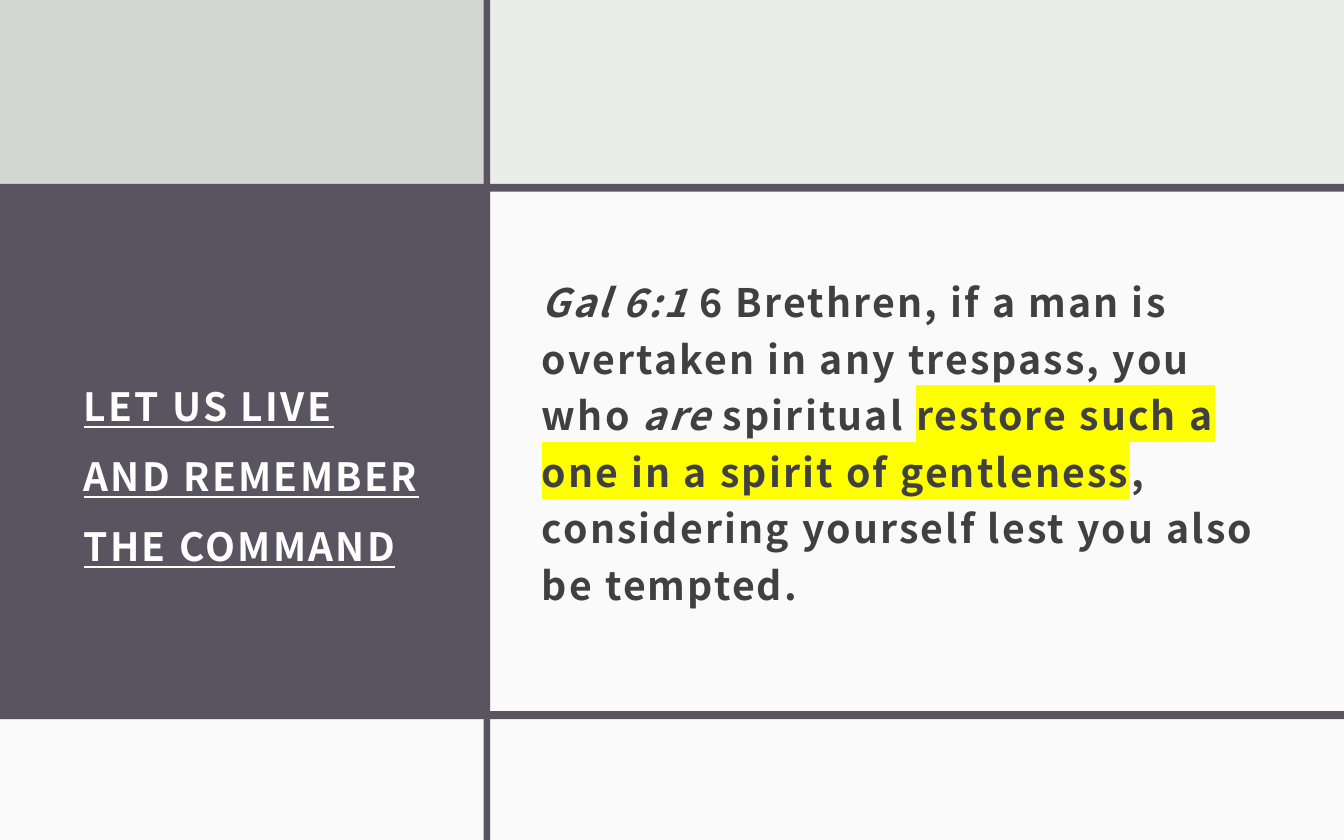
from lxml import etree
from pptx import Presentation
from pptx import util as u
from pptx.dml.color import RGBColor
from pptx.enum import shapes, text
from pptx.oxml.ns import qn

# Content
FONT = "Noto Sans CJK JP"
TITLE = [("LET US LIVE AND REMEMBER THE COMMAND", "")]
VERSE = [
    ("Gal 6:1 ", "italic"),
    ("6\u00a0Brethren, if a man is overtaken in any trespass, you who ", ""),
    ("are", "italic"),
    (" spiritual ", ""),
    ("restore such a one in a spirit of gentleness", "highlight"),
    (", considering yourself lest you also be tempted.", ""),
]

# Layout in centimetres
WIDTH, HEIGHT = 30.48, 19.05
COLUMN = 11.07
ROW_1, ROW_2 = 4.22, 16.28
BAR = 0.18
TEXT_TOP = 5.44
PURPLE, PALE, SAGE, WHITE = "595460", "EBEDEB", "D2D7D2", "FFFFFF"

# Left, top, width, height, colour, opacity in percent; back to front
PANELS = [
    (0, 0, WIDTH, HEIGHT, PALE, 100),
    (0, 4.17, COLUMN, 12.14, PURPLE, 100),
    (0, 0, COLUMN, ROW_1, SAGE, 100),
    (COLUMN, ROW_1, WIDTH - COLUMN, 12.09, WHITE, 75),
    (0, 4.17, WIDTH, BAR, PURPLE, 100),
    (0, ROW_2, WIDTH, HEIGHT - ROW_2, WHITE, 75),
    (0, 16.13, WIDTH, BAR, PURPLE, 100),
    (10.97, 0, 0.15, HEIGHT, PURPLE, 100),
]


def colour(value):
    return RGBColor.from_string(value)


def add_panel(slide, left, top, width, height, fill, opacity):
    shape = slide.shapes.add_shape(
        shapes.MSO_SHAPE.RECTANGLE, *map(u.Cm, (left, top, width, height)))
    shape.shadow.inherit = False
    shape.line.fill.background()
    shape.fill.solid()
    shape.fill.fore_color.rgb = colour(fill)
    if opacity < 100:
        tone = shape.fill._xPr.find(".//" + qn("a:srgbClr"))
        etree.SubElement(tone, qn("a:alpha"), val=str(opacity * 1000))


def add_text(slide, box, runs, size, tone, line_spacing, tracking):
    frame = slide.shapes.add_textbox(*map(u.Cm, box)).text_frame
    frame.word_wrap = True
    frame.vertical_anchor = text.MSO_ANCHOR.MIDDLE
    frame.margin_left = frame.margin_right = frame.margin_top = u.Cm(0.3)
    frame.margin_bottom = u.Cm(0.25)
    paragraph = frame.paragraphs[0]
    paragraph.line_spacing = line_spacing
    font = paragraph.font
    font.name, font.size, font.bold = FONT, u.Pt(size), True
    font.color.rgb = colour(tone)
    font._rPr.set("spc", str(round(tracking * 100)))
    for words, style in runs:
        run = paragraph.add_run()
        run.text = words
        if style == "italic":
            run.font.italic = True
        elif style == "highlight":
            mark = etree.SubElement(run.font._rPr, qn("a:highlight"))
            etree.SubElement(mark, qn("a:srgbClr"), val="FFFF00")
    return paragraph


def main():
    presentation = Presentation()
    presentation.slide_width = u.Cm(WIDTH)
    presentation.slide_height = u.Cm(HEIGHT)
    slide = presentation.slides.add_slide(presentation.slide_layouts[6])
    slide.background.fill.solid()
    slide.background.fill.fore_color.rgb = colour(PALE)

    # Panels and dividing bars
    for panel in PANELS:
        add_panel(slide, *panel)

    # Title and verse
    title = add_text(slide, (1.6, TEXT_TOP, 8.53, 10.11), TITLE, 25, WHITE, 1.5, 1.5)
    title.font.underline = True
    verse = add_text(slide, (11.99, TEXT_TOP, 17.48, 8.97), VERSE, 25.2, "404040", 1.2, 1.4)
    verse.space_before = u.Pt(8.4)

    presentation.save("out.pptx")


if __name__ == "__main__":
    main()
